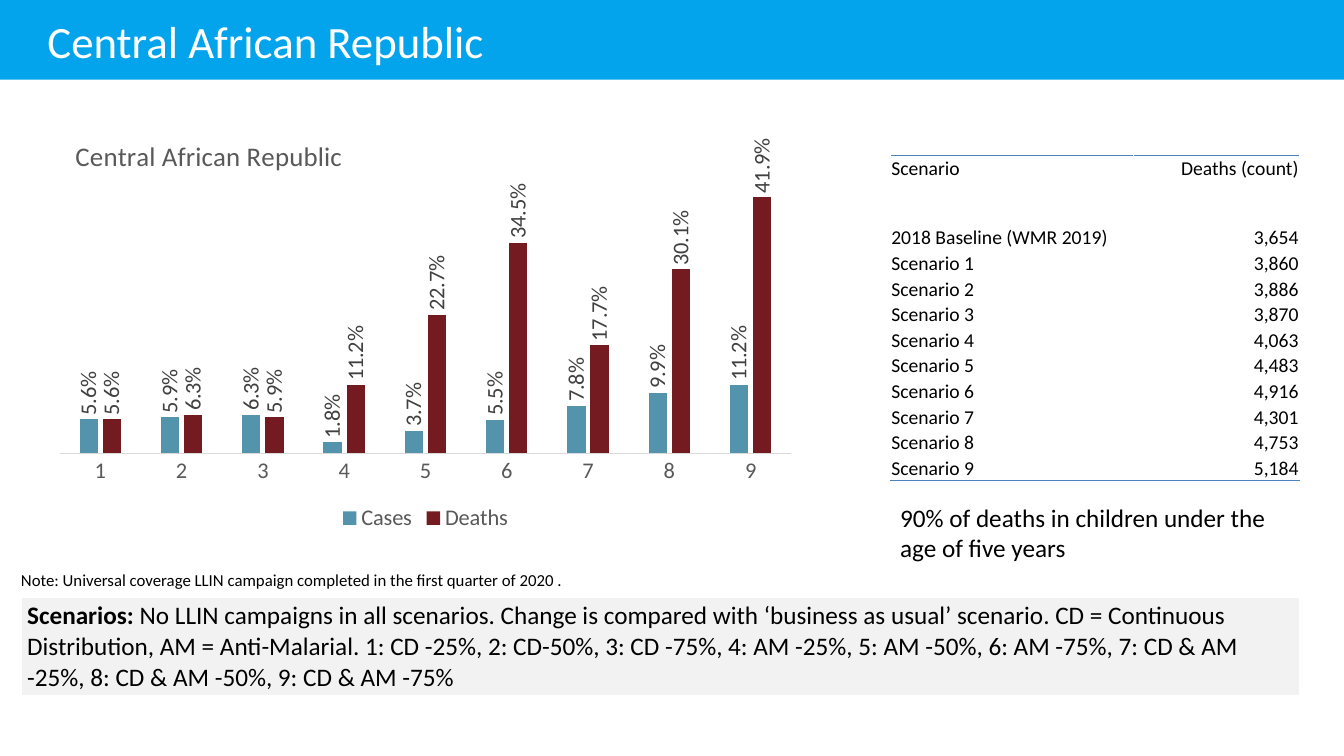
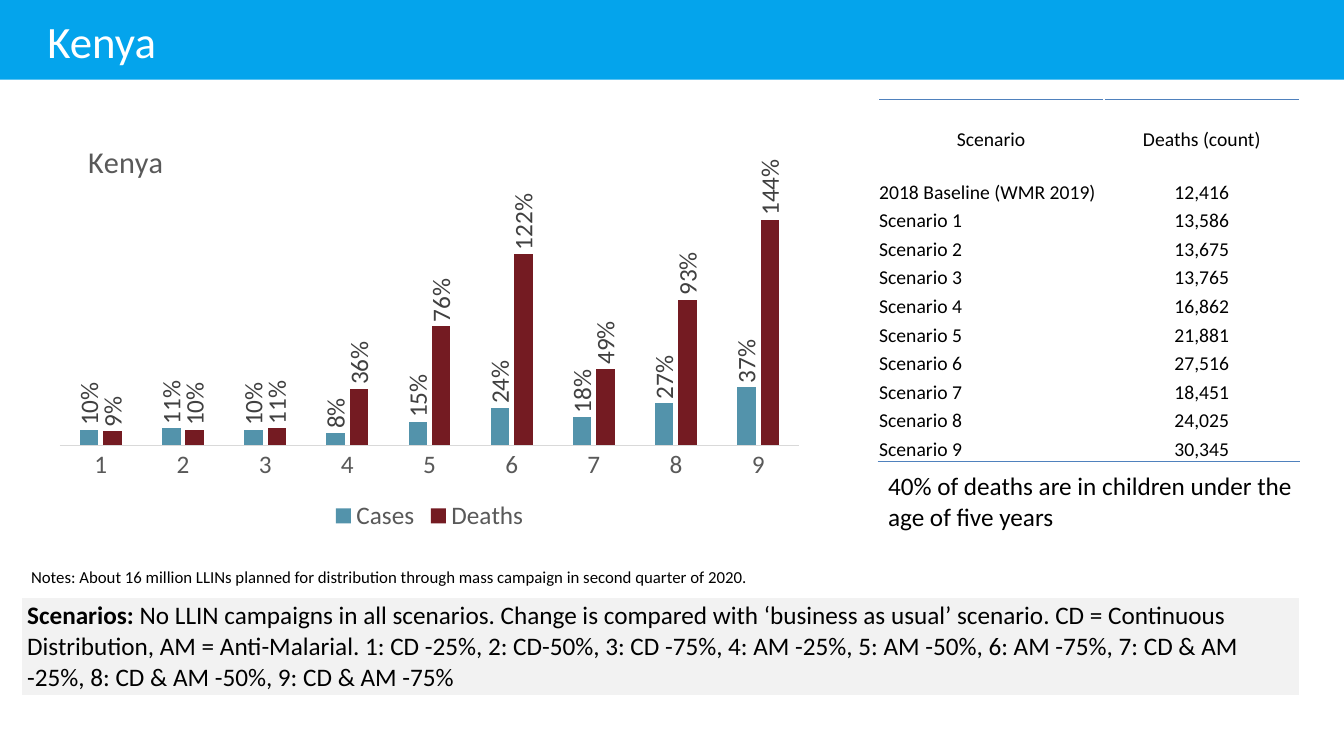
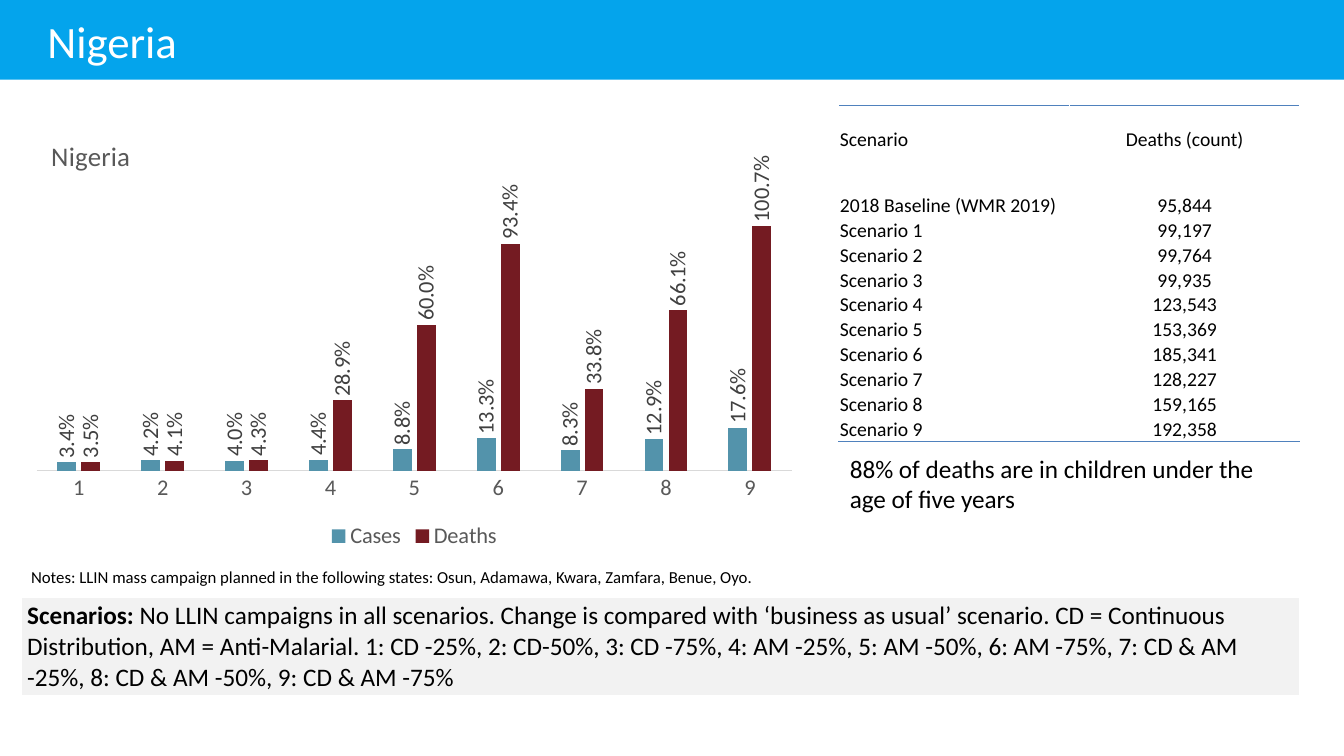
from dataclasses import dataclass

from lxml.etree import SubElement
from pptx import Presentation
from pptx.chart.data import CategoryChartData
from pptx.dml.color import RGBColor
from pptx.enum.chart import XL_CHART_TYPE, XL_LABEL_POSITION, XL_LEGEND_POSITION, XL_TICK_MARK
from pptx.enum.shapes import MSO_SHAPE
from pptx.enum.text import MSO_ANCHOR, MSO_AUTO_SIZE, PP_ALIGN
from pptx.oxml.ns import qn
from pptx.util import Emu, Pt

EMU_PER_PX = 9144
SLIDE_W, SLIDE_H = 1333, 750


@dataclass(frozen=True)
class Theme:
    font: str = "Calibri"
    band: str = "04A4EC"
    white: str = "FFFFFF"
    text: str = "000000"
    panel: str = "F2F2F2"
    rule: str = "4F81BD"
    axis: str = "D9D9D9"
    muted: str = "595959"
    label: str = "404040"
    cases: str = "5393AB"
    deaths: str = "741B22"
    title_size: float = 32
    body_size: float = 18
    table_size: float = 14
    note_size: float = 12
    chart_title_scale: float = 1.2


THEME = Theme()


@dataclass(frozen=True)
class Box:
    x: int
    y: int
    w: int
    h: int

    def emu(self) -> tuple[Emu, Emu, Emu, Emu]:
        return px(self.x), px(self.y), px(self.w), px(self.h)


@dataclass(frozen=True)
class ChartSpec:
    box: Box
    size: int
    number_format: str
    axis_max: float
    plot_top: int
    plot_h: int
    title_x: int
    title_y: int
    cases: list[float]
    deaths: list[float]


@dataclass(frozen=True)
class TableSpec:
    box: Box
    scenario_w: int
    head_h: int
    baseline_h: int
    head_align: PP_ALIGN
    count_align: PP_ALIGN
    counts: list[int]


@dataclass(frozen=True)
class Country:
    name: str
    chart: ChartSpec
    table: TableSpec
    note: str
    note_box: Box
    takeaway: str
    takeaway_box: Box


TITLE_BOX = Box(37, 5, 1200, 70)
BAND_BOX = Box(0, 0, SLIDE_W, 79)
SCENARIOS_BOX = Box(21, 593, 1268, 96)
SCENARIOS_TEXT = (
    "No LLIN campaigns in all scenarios. Change is compared with ‘business as usual’ scenario. "
    "CD = Continuous Distribution, AM = Anti-Malarial. 1: CD -25%, 2: CD-50%, 3: CD -75%, "
    "4: AM -25%, 5: AM -50%, 6: AM -75%, 7: CD & AM -25%, 8: CD & AM -50%, 9: CD & AM -75%"
)

COUNTRIES = [
    Country(
        "Central African Republic",
        ChartSpec(
            Box(44, 105, 756, 427), 16, "0.0%", 0.45, 177, 273, 70, 131,
            [5.6, 5.9, 6.3, 1.8, 3.7, 5.5, 7.8, 9.9, 11.2],
            [5.6, 6.3, 5.9, 11.2, 22.7, 34.5, 17.7, 30.1, 41.9],
        ),
        TableSpec(
            Box(883, 154, 406, 323), 241, 25, 69, PP_ALIGN.LEFT, PP_ALIGN.RIGHT,
            [3654, 3860, 3886, 3870, 4063, 4483, 4916, 4301, 4753, 5184],
        ),
        "Note: Universal coverage LLIN campaign completed in the first quarter of 2020 .",
        Box(11, 560, 832, 30),
        "90% of deaths in children under the age of five years",
        Box(883, 493, 406, 71),
    ),
    Country(
        "Kenya",
        ChartSpec(
            Box(44, 115, 764, 417), 18, "0%", 1.6, 193, 249, 82, 134,
            [10, 11, 10, 8, 15, 24, 18, 27, 37],
            [9, 10, 11, 36, 76, 122, 49, 93, 144],
        ),
        TableSpec(
            Box(871, 99, 418, 359), 224, 52, 52, PP_ALIGN.CENTER, PP_ALIGN.CENTER,
            [12416, 13586, 13675, 13765, 16862, 21881, 27516, 18451, 24025, 30345],
        ),
        "Notes: About 16 million LLINs planned for distribution through mass campaign "
        "in second quarter of 2020.",
        Box(21, 557, 757, 30),
        "40% of deaths are in children under the age of five years",
        Box(871, 462, 457, 71),
    ),
    Country(
        "Nigeria",
        ChartSpec(
            Box(21, 105, 780, 445), 16, "0.0%", 1.2, 178, 289, 46, 131,
            [3.4, 4.2, 4.0, 4.4, 8.8, 13.3, 8.3, 12.9, 17.6],
            [3.5, 4.1, 4.3, 28.9, 60.0, 93.4, 33.8, 66.1, 100.7],
        ),
        TableSpec(
            Box(832, 105, 457, 333), 229, 45, 66, PP_ALIGN.LEFT, PP_ALIGN.CENTER,
            [95844, 99197, 99764, 99935, 123543, 153369, 185341, 128227, 159165, 192358],
        ),
        "Notes: LLIN mass campaign planned in the following states: "
        "Osun, Adamawa, Kwara, Zamfara, Benue, Oyo.",
        Box(21, 557, 757, 30),
        "88% of deaths are in children under the age of five years",
        Box(833, 445, 457, 71),
    ),
]


def px(n: float) -> Emu:
    return Emu(round(n * EMU_PER_PX))


def rgb(color: str) -> RGBColor:
    return RGBColor.from_string(color)


def style_font(font, size: float, color: str) -> None:
    font.name = THEME.font
    font.size = Pt(size)
    font.color.rgb = rgb(color)


def add_band(slide, layout) -> None:
    sp = slide.shapes.add_shape(MSO_SHAPE.RECTANGLE, *BAND_BOX.emu())
    sp.shadow.inherit = False
    sp.fill.solid()
    sp.fill.fore_color.rgb = rgb(THEME.band)
    sp.line.fill.background()
    layout.shapes.element.insert(2, sp.element)


def set_title(slide, text: str) -> None:
    sp = slide.shapes.title
    sp.left, sp.top, sp.width, sp.height = TITLE_BOX.emu()
    tf = sp.text_frame
    tf.text = text
    tf.auto_size = MSO_AUTO_SIZE.NONE
    tf.vertical_anchor = MSO_ANCHOR.MIDDLE
    p = tf.paragraphs[0]
    p.alignment = PP_ALIGN.LEFT
    style_font(p.font, THEME.title_size, THEME.white)


def add_text(slide, box: Box, text: str, size: float) -> None:
    tf = slide.shapes.add_textbox(*box.emu()).text_frame
    tf.word_wrap = True
    tf.text = text
    style_font(tf.paragraphs[0].font, size, THEME.text)


def add_plain_table(slide, box: Box, rows: int, cols: int):
    table = slide.shapes.add_table(rows, cols, *box.emu()).table
    table.first_row = False
    table.horz_banding = False
    return table


def set_margins(cell, x: int, top: int, bottom: int) -> None:
    cell.margin_left = cell.margin_right = px(x)
    cell.margin_top, cell.margin_bottom = px(top), px(bottom)


def add_scenarios(slide) -> None:
    cell = add_plain_table(slide, SCENARIOS_BOX, 1, 1).cell(0, 0)
    cell.fill.solid()
    cell.fill.fore_color.rgb = rgb(THEME.panel)
    set_margins(cell, 6, 3, 3)
    p = cell.text_frame.paragraphs[0]
    style_font(p.font, THEME.body_size, THEME.text)
    for text, bold in (("Scenarios: ", True), (SCENARIOS_TEXT, False)):
        r = p.add_run()
        r.text = text
        r.font.bold = bold


def add_border(cell, side: str) -> None:
    tc_pr = cell._tc.get_or_add_tcPr()
    ln = SubElement(tc_pr, qn(f"a:{side}"), w=str(Pt(1)))
    fill = SubElement(ln, qn("a:solidFill"))
    SubElement(fill, qn("a:srgbClr"), val=THEME.rule)
    tc_pr.insert(0, ln)


def add_deaths_table(slide, spec: TableSpec) -> None:
    labels = ["2018 Baseline (WMR 2019)"] + [f"Scenario {n}" for n in range(1, 10)]
    rows = [("Scenario", "Deaths (count)")]
    rows += [(label, f"{count:,}") for label, count in zip(labels, spec.counts)]
    table = add_plain_table(slide, spec.box, len(rows), 2)
    table.columns[0].width = px(spec.scenario_w)
    table.columns[1].width = px(spec.box.w - spec.scenario_w)
    scenario_h = (spec.box.h - spec.head_h - spec.baseline_h) / (len(rows) - 2)
    heights = [spec.head_h, spec.baseline_h] + [scenario_h] * (len(rows) - 2)
    for i, (values, height) in enumerate(zip(rows, heights)):
        table.rows[i].height = px(height)
        aligns = (PP_ALIGN.LEFT if i else spec.head_align, spec.count_align)
        for j, (value, align) in enumerate(zip(values, aligns)):
            cell = table.cell(i, j)
            cell.fill.background()
            cell.vertical_anchor = MSO_ANCHOR.BOTTOM
            set_margins(cell, 1, 1, 0)
            cell.text = value
            p = cell.text_frame.paragraphs[0]
            p.alignment = align
            style_font(p.font, THEME.table_size, THEME.text)
            if i == 0:
                add_border(cell, "lnT")
            elif i == len(rows) - 1:
                add_border(cell, "lnB")


def set_layout(parent, index: int, **fractions: float) -> None:
    for old in parent.findall(qn("c:layout")):
        parent.remove(old)
    layout = SubElement(parent, qn("c:layout"))
    manual = SubElement(layout, qn("c:manualLayout"))
    if "w" in fractions:
        SubElement(manual, qn("c:layoutTarget"), val="inner")
    for key in ("x", "y"):
        SubElement(manual, qn(f"c:{key}Mode"), val="edge")
    for key, value in fractions.items():
        SubElement(manual, qn(f"c:{key}"), val=f"{value:.4f}")
    parent.insert(index, layout)


def add_deaths_chart(slide, name: str, spec: ChartSpec) -> None:
    data = CategoryChartData(number_format=spec.number_format)
    data.categories = [str(n) for n in range(1, 10)]
    for series_name, values in (("Cases", spec.cases), ("Deaths", spec.deaths)):
        data.add_series(series_name, [round(v / 100, 3) for v in values])
    box = spec.box
    chart = slide.shapes.add_chart(XL_CHART_TYPE.COLUMN_CLUSTERED, *box.emu(), data).chart
    style_font(chart.font, spec.size, THEME.text)

    chart.has_title = True
    tf = chart.chart_title.text_frame
    tf.text = name
    p = tf.paragraphs[0]
    style_font(p.font, spec.size * THEME.chart_title_scale, THEME.muted)
    p.font.bold = False
    set_layout(
        chart.element.find(f".//{qn('c:title')}"), 1,
        x=(spec.title_x - box.x) / box.w, y=(spec.title_y - box.y) / box.h,
    )
    set_layout(
        chart.element.find(f".//{qn('c:plotArea')}"), 0,
        x=0.02, y=(spec.plot_top - box.y) / box.h, w=0.96, h=spec.plot_h / box.h,
    )

    chart.has_legend = True
    chart.legend.position = XL_LEGEND_POSITION.BOTTOM
    chart.legend.include_in_layout = False
    style_font(chart.legend.font, spec.size, THEME.muted)

    cat = chart.category_axis
    cat.major_tick_mark = cat.minor_tick_mark = XL_TICK_MARK.NONE
    cat.format.line.color.rgb = rgb(THEME.axis)
    cat.format.line.width = Pt(0.75)
    style_font(cat.tick_labels.font, spec.size, THEME.muted)
    val = chart.value_axis
    val.minimum_scale, val.maximum_scale = 0, spec.axis_max
    val.has_major_gridlines = False
    val.visible = False

    plot = chart.plots[0]
    plot.gap_width, plot.overlap = 219, -27
    plot.vary_by_categories = False
    for series, color in zip(plot.series, (THEME.cases, THEME.deaths)):
        series.format.fill.solid()
        series.format.fill.fore_color.rgb = rgb(color)
        labels = series.data_labels
        labels.show_value = True
        labels.number_format = spec.number_format
        labels.number_format_is_linked = False
        labels.position = XL_LABEL_POSITION.OUTSIDE_END
        style_font(labels.font, spec.size, THEME.label)
    for d_lbls in chart.element.iter(qn("c:dLbls")):
        body = d_lbls.find(f".//{qn('a:bodyPr')}")
        body.set("rot", "-5400000")
        body.set("vert", "horz")


def main() -> None:
    prs = Presentation()
    prs.slide_width, prs.slide_height = px(SLIDE_W), px(SLIDE_H)
    layout = prs.slide_layouts[5]
    for i, country in enumerate(COUNTRIES):
        slide = prs.slides.add_slide(layout)
        if i == 0:
            add_band(slide, layout)
        set_title(slide, country.name)
        add_scenarios(slide)
        add_text(slide, country.note_box, country.note, THEME.note_size)
        add_text(slide, country.takeaway_box, country.takeaway, THEME.body_size)
        add_deaths_table(slide, country.table)
        add_deaths_chart(slide, country.name, country.chart)
    prs.save("out.pptx")


if __name__ == "__main__":
    main()
